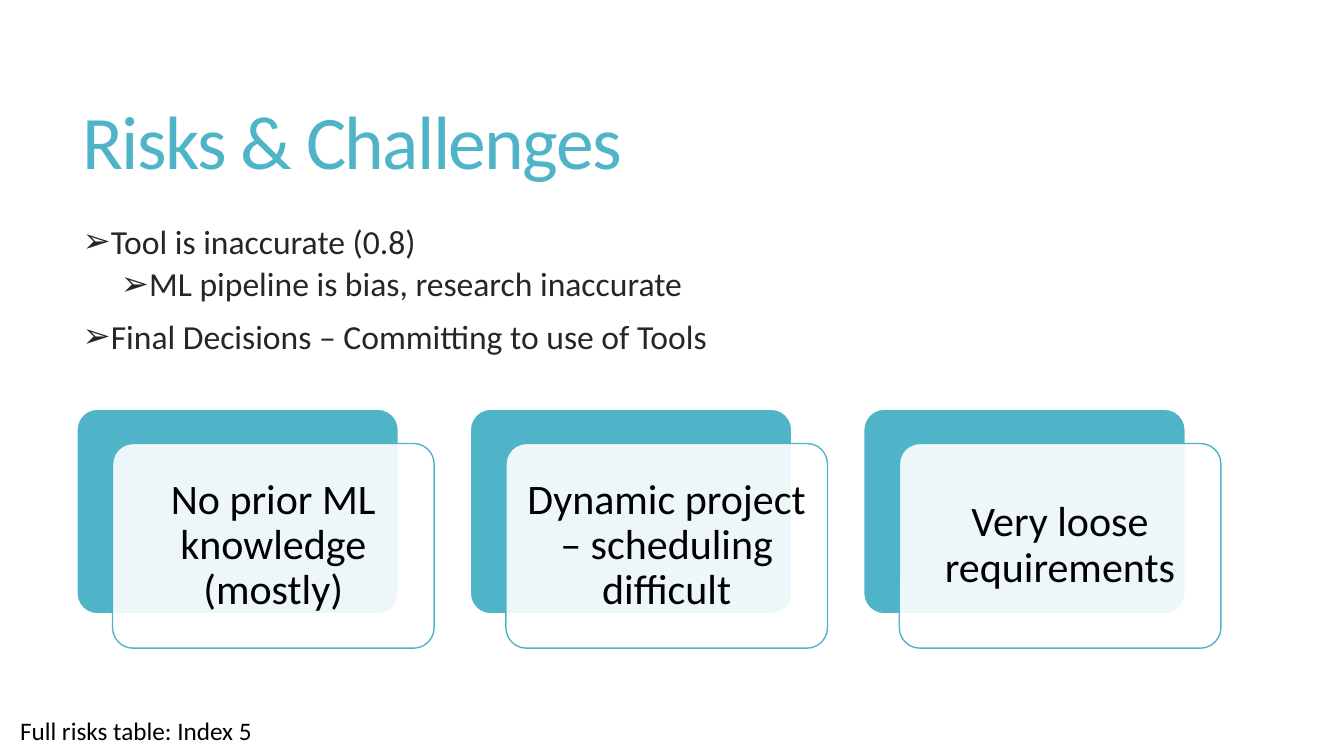
"""Build the Risks & Challenges slide."""
from lxml import etree
from pptx import Presentation
from pptx.dml.color import RGBColor
from pptx.enum.shapes import MSO_SHAPE
from pptx.enum.text import MSO_ANCHOR, MSO_AUTO_SIZE, PP_ALIGN
from pptx.oxml.ns import qn
from pptx.util import Pt

ROUNDED = MSO_SHAPE.ROUNDED_RECTANGLE
MIDDLE = MSO_ANCHOR.MIDDLE
TOP = MSO_ANCHOR.TOP
NO_AUTOFIT = MSO_AUTO_SIZE.NONE
LEFT = PP_ALIGN.LEFT
CENTER = PP_ALIGN.CENTER
TEAL = "50B4C8"
WHITE = "FFFFFF"
BLACK = "000000"


def add_text(paragraph, text, size, color, alignment=LEFT):
    paragraph.alignment = alignment
    run = paragraph.add_run()
    run.text = text
    run.font.name = "Calibri"
    run.font.size = Pt(size)
    run.font.color.rgb = RGBColor.from_string(color)
    return run


def add_card(left, top, fill, line):
    card = slide.shapes.add_shape(ROUNDED, Pt(left), Pt(top), Pt(229.7), Pt(146.2))
    card.adjustments[0] = 0.1
    card.shadow.inherit = False
    card.fill.solid()
    card.fill.fore_color.rgb = RGBColor.from_string(fill)
    card.line.color.rgb = RGBColor.from_string(line)
    card.line.width = Pt(1)
    return card


presentation = Presentation()
presentation.slide_width = Pt(960)
presentation.slide_height = Pt(540)
slide = presentation.slides.add_slide(presentation.slide_layouts[1])

title = slide.shapes.title
title.left, title.top, title.width, title.height = Pt(51.8), Pt(39.6), Pt(848.2), Pt(130.3)
title.text_frame.auto_size = NO_AUTOFIT
title.text_frame.vertical_anchor = MIDDLE
title_paragraph = title.text_frame.paragraphs[0]
title_paragraph.line_spacing = 0.85
title_run = add_text(title_paragraph, "Risks & Challenges", 54, TEAL)
title_run.font._element.set("spc", "-120")

body = slide.placeholders[1]
body.left, body.top, body.width, body.height = Pt(51.8), Pt(158.4), Pt(573.8), Pt(296.6)
body.text_frame.auto_size = NO_AUTOFIT
body.text_frame.vertical_anchor = TOP
risks = [
    ("Tool is inaccurate (0.8)", 0, 0),
    ("ML pipeline is bias, research inaccurate", 1, 6),
    ("Final Decisions – Committing to use of Tools", 0, 13),
]
indents = [(7.2, -7.2), (27.4, 0)]
for index, (text, level, space_before) in enumerate(risks):
    paragraph = body.text_frame.add_paragraph() if index else body.text_frame.paragraphs[0]
    paragraph.level = level
    margin, indent = indents[level]
    properties = paragraph._p.get_or_add_pPr()
    properties.set("marL", str(Pt(margin)))
    properties.set("indent", str(Pt(indent)))
    etree.SubElement(properties, qn("a:buChar")).set("char", "➢")
    paragraph.line_spacing = 0.85
    paragraph.space_before = Pt(space_before)
    add_text(paragraph, text, 24, "262626")

footnote = slide.shapes.add_textbox(Pt(7.2), Pt(507.6), Pt(214.6), Pt(28.8))
footnote.text_frame.word_wrap = True
add_text(footnote.text_frame.paragraphs[0], "Full risks table: Index 5", 18, BLACK)

challenges = [
    "No prior ML knowledge (mostly)",
    "Dynamic project – scheduling difficult",
    "Very loose requirements",
]
for column, challenge in enumerate(challenges):
    left = 54.9 + column * 281
    add_card(left, 292.3, TEAL, WHITE)
    panel = add_card(left + 25.5, 316.8, WHITE, TEAL)
    panel_color = panel.fill._xPr.find(qn("a:solidFill"))[0]
    etree.SubElement(panel_color, qn("a:alpha")).set("val", "90000")
    frame = panel.text_frame
    frame.word_wrap = True
    frame.vertical_anchor = MIDDLE
    frame.margin_left = frame.margin_right = Pt(8.6)
    frame.margin_top = frame.margin_bottom = Pt(8.6)
    paragraph = frame.paragraphs[0]
    paragraph.line_spacing = 0.9
    add_text(paragraph, challenge, 30, BLACK, CENTER)

presentation.save("out.pptx")
